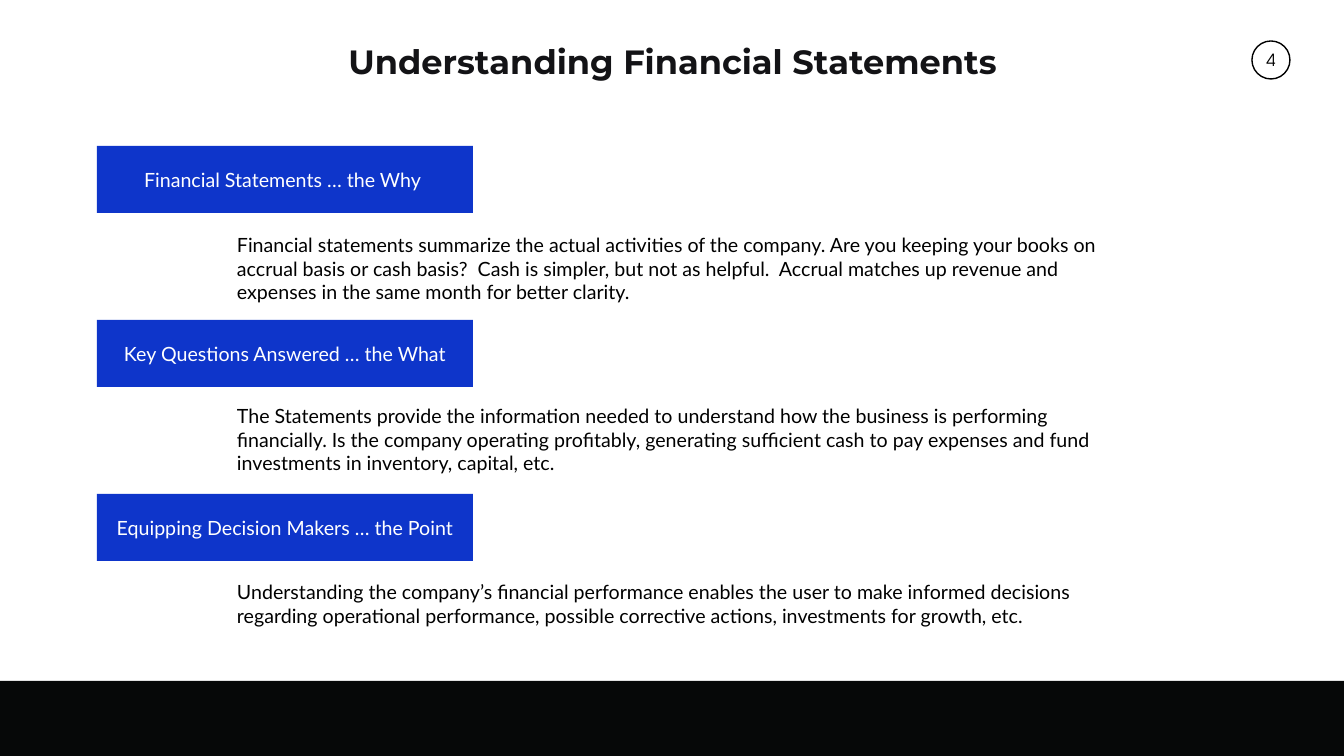
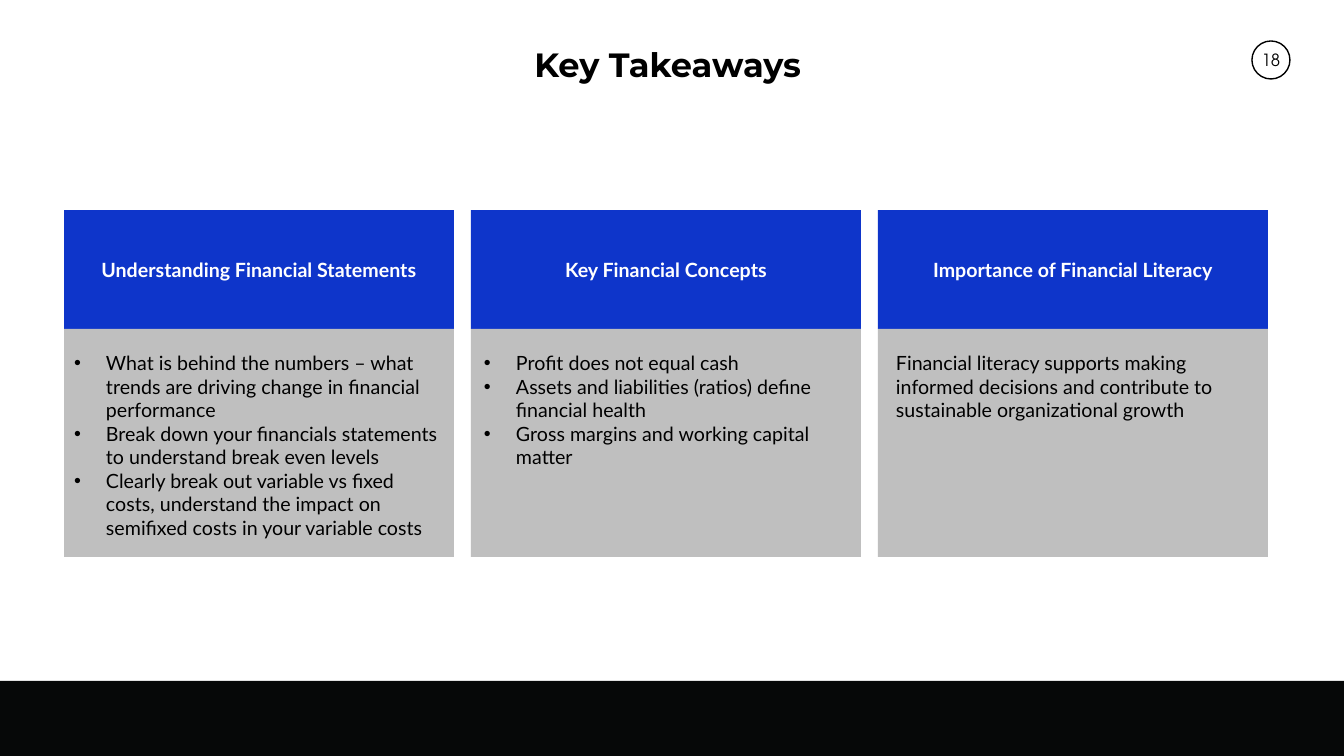
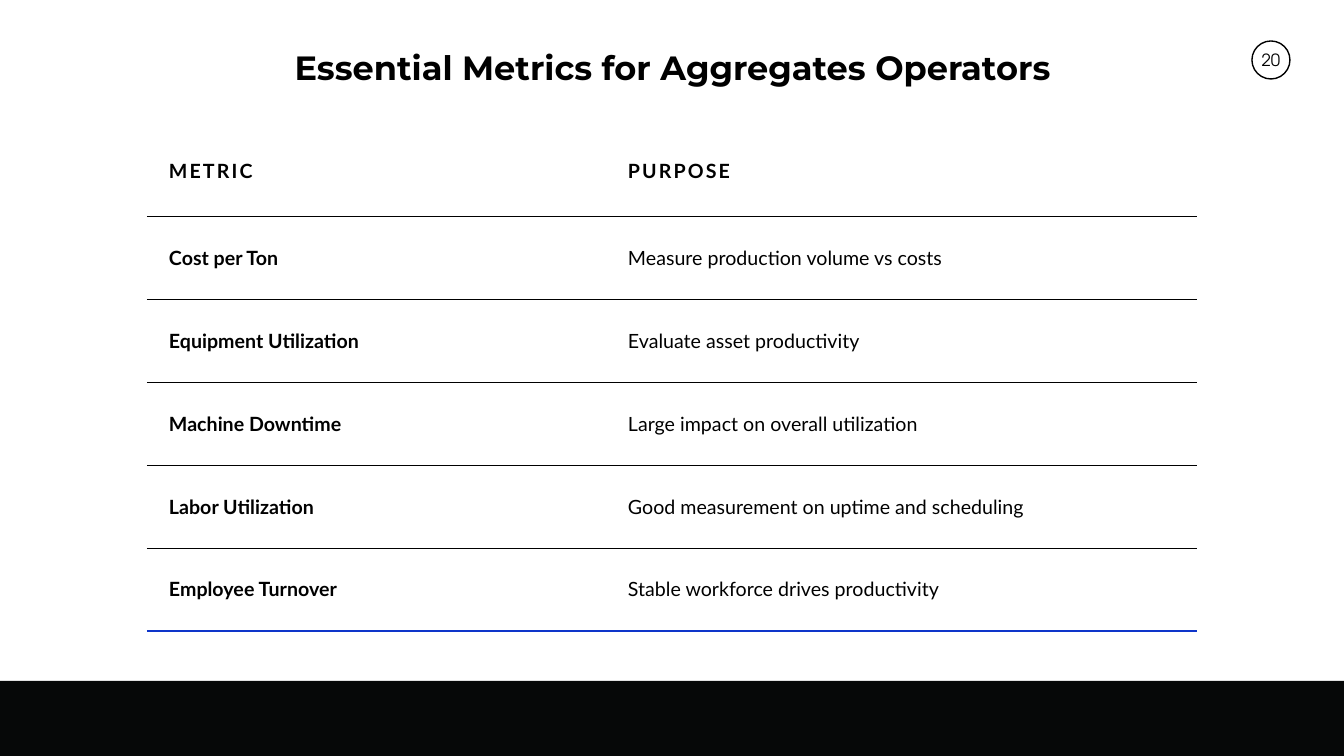
from lxml.etree import SubElement
from pptx import Presentation
from pptx.dml.color import RGBColor
from pptx.enum.shapes import MSO_SHAPE
from pptx.enum.text import MSO_ANCHOR, MSO_AUTO_SIZE, PP_ALIGN
from pptx.oxml.ns import qn
from pptx.util import Pt

WIDTH, HEIGHT = 1344, 756
SCALE = 12192000 / WIDTH
INK = {"black": "000000", "title": "131316", "band": "060808",
       "blue": "0E35CA", "grey": "BFBFBF", "white": "FFFFFF"}
TITLE, BODY, NUMBER = "Montserrat", "Lato", "TeX Gyre Adventor"
TITLE_ONLY, TWO_LISTS = 5, 3


def emu(px):
    return round(px * SCALE)


def color(name):
    return RGBColor.from_string(INK[name])


class Deck:
    def __init__(self):
        self.file = Presentation()
        self.file.slide_width, self.file.slide_height = emu(WIDTH), emu(HEIGHT)
        self.slide = None

    def page(self, number, title, box, ink="black", layout=TITLE_ONLY):
        """Start a slide with its number, bottom band and title."""
        self.slide = self.file.slides.add_slide(self.file.slide_layouts[layout])
        badge = self.shape((1252, 41, 38, 38), line="black", kind=MSO_SHAPE.OVAL)
        self.fill_text(badge.text_frame, [str(number)], 12, font=NUMBER,
                       align=PP_ALIGN.CENTER, anchor=MSO_ANCHOR.MIDDLE, pad=(0, 0))
        badge.text_frame.word_wrap = False
        self.shape((0, 681, WIDTH, 75), "band")
        head = self.place(self.slide.shapes.title, box)
        self.fill_text(head.text_frame, [title], 24, ink, True, TITLE,
                       PP_ALIGN.CENTER, MSO_ANCHOR.MIDDLE)
        head.text_frame.paragraphs[0].line_spacing = 0.9

    def place(self, holder, box):
        """Move a placeholder and bring it to the front."""
        holder.left, holder.top, holder.width, holder.height = map(emu, box)
        holder.element.getparent().append(holder.element)
        return holder

    def fill_text(self, frame, lines, size=14, ink="black", bold=False, font=BODY,
                  align=PP_ALIGN.LEFT, anchor=MSO_ANCHOR.TOP, pad=(10, 5)):
        frame.text = "\n".join(lines)
        frame.word_wrap, frame.auto_size = True, MSO_AUTO_SIZE.NONE
        frame.vertical_anchor = anchor
        frame.margin_left = frame.margin_right = emu(pad[0])
        frame.margin_top = frame.margin_bottom = emu(pad[1])
        for para in frame.paragraphs:
            para.alignment = align
            para.space_before = Pt(0)
            for run in para.runs:
                self.style(run.font, size, ink, bold, font)

    def style(self, face, size, ink, bold, font):
        face.name, face.size, face.bold = font, Pt(size), bold
        face.color.rgb = color(ink)

    def shape(self, box, fill=None, line=None, kind=MSO_SHAPE.RECTANGLE):
        item = self.slide.shapes.add_shape(kind, *map(emu, box))
        item.shadow.inherit = False
        if fill:
            item.fill.solid()
            item.fill.fore_color.rgb = color(fill)
        else:
            item.fill.background()
        if line:
            item.line.color.rgb, item.line.width = color(line), Pt(1)
        else:
            item.line.fill.background()
        return item

    def label(self, text, box, bold=False):
        item = self.shape(box, "blue")
        self.fill_text(item.text_frame, [text], ink="white", bold=bold,
                       align=PP_ALIGN.CENTER, anchor=MSO_ANCHOR.MIDDLE)

    def note(self, text, box, indent=0):
        frame = self.slide.shapes.add_textbox(*map(emu, box)).text_frame
        self.fill_text(frame, [text])
        frame.margin_left = emu(10 + indent)

    def bullets(self, index, lines, box):
        frame = self.place(self.slide.placeholders[index], box).text_frame
        self.fill_text(frame, lines)
        for para in frame.paragraphs:
            props = para._p.get_or_add_pPr()
            props.set("marL", str(emu(32)))
            props.set("indent", str(-emu(32)))

    def border(self, cell, side, ink=None, width=0.5):
        line = SubElement(cell._tc.get_or_add_tcPr(), qn("a:ln" + side),
                          w=str(Pt(width)))
        if ink:
            fill = SubElement(line, qn("a:solidFill"))
            SubElement(fill, qn("a:srgbClr"), val=INK[ink])
        else:
            SubElement(line, qn("a:noFill"))

    def table(self, rows, spot, cols, heights):
        size = (sum(cols), sum(heights))
        grid = self.slide.shapes.add_table(
            len(rows), len(cols), *map(emu, spot + size)).table
        grid.first_row = grid.horz_banding = False
        for col, width in zip(grid.columns, cols):
            col.width = emu(width)
        for row, height in zip(grid.rows, heights):
            row.height = emu(height)
        # Rules under every row; the last one is blue and heavier
        rules = [(None,)] + [("black",)] * (len(rows) - 1) + [("blue", 1.5)]
        for r, texts in enumerate(rows):
            for c, text in enumerate(texts):
                cell = grid.cell(r, c)
                for side, rule in (("L", (None,)), ("R", (None,)),
                                   ("T", rules[r]), ("B", rules[r + 1])):
                    self.border(cell, side, *rule)
                cell.fill.background()
                cell.vertical_anchor = MSO_ANCHOR.MIDDLE
                cell.margin_left = cell.margin_right = emu(22)
                cell.margin_top = cell.margin_bottom = emu(22)
                cell.text_frame.text = text
                run = cell.text_frame.paragraphs[0].runs[0]
                self.style(run.font, 14, "black", r == 0 or c == 0, BODY)
                if r == 0:
                    run._r.get_or_add_rPr().set("spc", "150")


def main():
    deck = Deck()

    # Why, what and point
    deck.page(4, "Understanding Financial Statements", (325, 41, 695, 46), "title")
    parts = [
        ("Financial Statements … the Why ", 228, 82,
         "Financial statements summarize the actual activities of the company. "
         "Are you keeping your books on accrual basis or cash basis?  Cash is "
         "simpler, but not as helpful.  Accrual matches up revenue and expenses "
         "in the same month for better clarity."),
        ("Key Questions Answered … the What", 399, 82,
         "The Statements provide the information needed to understand how the "
         "business is performing financially. Is the company operating "
         "profitably, generating sufficient cash to pay expenses and fund "
         "investments in inventory, capital, etc."),
        ("Equipping Decision Makers … the Point", 575, 57,
         "Understanding the company’s financial performance enables the user to "
         "make informed decisions regarding operational performance, possible "
         "corrective actions, investments for growth, etc."),
    ]
    for i, (name, top, height, text) in enumerate(parts):
        deck.label(name, (97, 146 + 174 * i, 376, 67))
        deck.note(text, (202, top, 941, height), indent=25)

    # Three takeaway cards
    deck.page(18, "Key Takeaways ", (93, 37, 1159, 59), layout=TWO_LISTS)
    heads = ["Understanding Financial Statements", "Key Financial Concepts",
             "Importance of Financial Literacy"]
    for i, head in enumerate(heads):
        left = 64 + 407 * i
        deck.label(head, (left, 210, 390, 119), bold=True)
        deck.shape((left, 329, 390, 228), "grey")
    deck.bullets(1, [
        "What is behind the numbers – what trends are driving change in "
        "financial performance",
        "Break down your financials statements to understand break even levels",
        "Clearly break out variable vs fixed costs, understand the impact on "
        "semifixed costs in your variable costs"], (64, 346, 388, 201))
    deck.bullets(2, [
        "Profit does not equal cash",
        "Assets and liabilities (ratios) define financial health",
        "Gross margins and working capital matter"], (474, 346, 386, 129))
    deck.note("Financial literacy supports making informed decisions and "
              "contribute to sustainable organizational growth",
              (886, 346, 363, 82))

    # Metrics table
    deck.page(20, "Essential Metrics for Aggregates Operators", (93, 40, 1159, 59))
    deck.table([
        ("METRIC", "PURPOSE"),
        ("Cost per Ton", "Measure production volume vs costs"),
        ("Equipment Utilization", "Evaluate asset productivity"),
        ("Machine Downtime", "Large impact on overall utilization"),
        ("Labor Utilization", "Good measurement on uptime and scheduling"),
        ("Employee Turnover", "Stable workforce drives productivity"),
    ], (147, 125), (459, 591), [91] + [83] * 5)

    deck.file.save("out.pptx")


if __name__ == "__main__":
    main()
